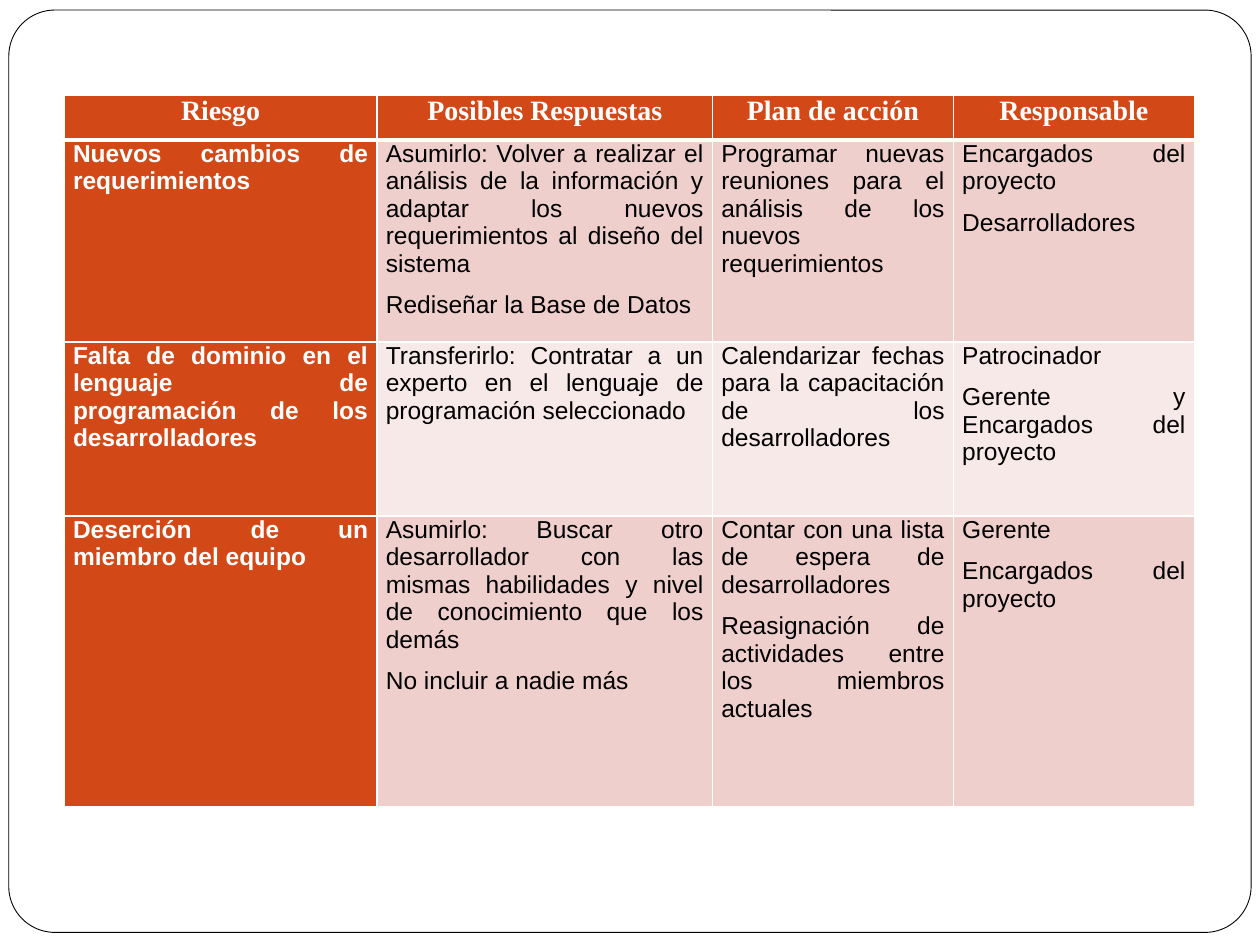
from dataclasses import dataclass

from lxml.etree import SubElement
from pptx import Presentation
from pptx.dml.color import RGBColor
from pptx.enum.shapes import MSO_SHAPE
from pptx.enum.text import PP_ALIGN
from pptx.oxml.ns import qn
from pptx.util import Inches, Pt


@dataclass(frozen=True)
class Theme:
    paper: str = "FFFFFF"
    ink: str = "000000"
    accent: str = "D34817"
    bands: tuple = ("EFCFCC", "F7E9E8")
    header_font: str = "Times New Roman"
    body_font: str = "Arial"
    header_size: int = 16
    body_size: int = 14
    paragraph_gap: int = 4
    frame_line: float = 0.5
    rule: int = 1
    header_rule: int = 3


THEME = Theme()
SLIDE_WIDTH, SLIDE_HEIGHT = Inches(10), Inches(7.5)
FRAME_BOX = (0.07, 0.08, 9.86, 7.32)
RISK_BOX = (0.51, 0.76, 8.97, 5.64)
COLUMN_WEIGHTS = (2.48, 2.66, 1.91, 1.91)
ROW_WEIGHTS = (0.35, 1.6, 1.38, 2.3)

HEADINGS = ("Riesgo", "Posibles Respuestas", "Plan de acción", "Responsable")
RISKS = (
    (
        "Nuevos cambios de requerimientos",
        "Asumirlo: Volver a realizar el análisis de la información y adaptar "
        "los nuevos requerimientos al diseño del sistema\n"
        "Rediseñar la Base de Datos",
        "Programar nuevas reuniones para el análisis de los nuevos requerimientos",
        "Encargados del proyecto\nDesarrolladores",
    ),
    (
        "Falta de dominio en el lenguaje de programación de los desarrolladores",
        "Transferirlo: Contratar a un experto en el lenguaje de programación seleccionado",
        "Calendarizar fechas para la capacitación de los desarrolladores",
        "Patrocinador\nGerente y Encargados del proyecto",
    ),
    (
        "Deserción de un miembro del equipo",
        "Asumirlo: Buscar otro desarrollador con las mismas habilidades y nivel "
        "de conocimiento que los demás\nNo incluir a nadie más",
        "Contar con una lista de espera de desarrolladores\n"
        "Reasignación de actividades entre los miembros actuales",
        "Gerente\nEncargados del proyecto",
    ),
)


def color(code):
    return RGBColor.from_string(code)


def draw_frame(slide, box):
    frame = slide.shapes.add_shape(MSO_SHAPE.ROUNDED_RECTANGLE, *map(Inches, box))
    frame.adjustments[0] = 0.05
    frame.shadow.inherit = False
    frame.fill.solid()
    frame.fill.fore_color.rgb = color(THEME.paper)
    frame.line.color.rgb = color(THEME.ink)
    frame.line.width = Pt(THEME.frame_line)


def rule_cell(cell, top, bottom):
    properties = cell._tc.get_or_add_tcPr()
    widths = {"lnL": THEME.rule, "lnR": THEME.rule, "lnT": top, "lnB": bottom}
    for side, width in widths.items():
        border = SubElement(properties, qn(f"a:{side}"), w=str(Pt(width)))
        SubElement(SubElement(border, qn("a:solidFill")), qn("a:srgbClr"), val=THEME.paper)


def fill_cell(cell, text, row, column):
    is_header = row == 0
    is_accent = is_header or column == 0
    rule_cell(
        cell,
        THEME.header_rule if row == 1 else THEME.rule,
        THEME.header_rule if is_header else THEME.rule,
    )
    cell.fill.solid()
    band = THEME.bands[(row - 1) % len(THEME.bands)]
    cell.fill.fore_color.rgb = color(THEME.accent if is_accent else band)
    cell.margin_left = cell.margin_right = Inches(0.07)
    cell.margin_top = cell.margin_bottom = 0
    cell.text_frame.text = text
    for paragraph in cell.text_frame.paragraphs:
        paragraph.alignment = PP_ALIGN.CENTER if is_header else PP_ALIGN.JUSTIFY
        if not is_header:
            paragraph.space_before = paragraph.space_after = Pt(THEME.paragraph_gap)
        for run in paragraph.runs:
            run.font.name = THEME.header_font if is_header else THEME.body_font
            run.font.size = Pt(THEME.header_size if is_header else THEME.body_size)
            run.font.bold = is_accent
            run.font.color.rgb = color(THEME.paper if is_accent else THEME.ink)


def draw_risk_table(slide, box):
    left, top, width, height = map(Inches, box)
    entries = (HEADINGS, *RISKS)
    table = slide.shapes.add_table(
        len(entries), len(HEADINGS), left, top, width, height
    ).table
    table.first_col = True
    for column, weight in zip(table.columns, COLUMN_WEIGHTS):
        column.width = int(width * weight / sum(COLUMN_WEIGHTS))
    for row, weight in zip(table.rows, ROW_WEIGHTS):
        row.height = int(height * weight / sum(ROW_WEIGHTS))
    for row, texts in enumerate(entries):
        for column, text in enumerate(texts):
            fill_cell(table.cell(row, column), text, row, column)


def main():
    presentation = Presentation()
    presentation.slide_width, presentation.slide_height = SLIDE_WIDTH, SLIDE_HEIGHT
    slide = presentation.slides.add_slide(presentation.slide_layouts.get_by_name("Blank"))
    draw_frame(slide, FRAME_BOX)
    draw_risk_table(slide, RISK_BOX)
    presentation.save("out.pptx")


if __name__ == "__main__":
    main()
